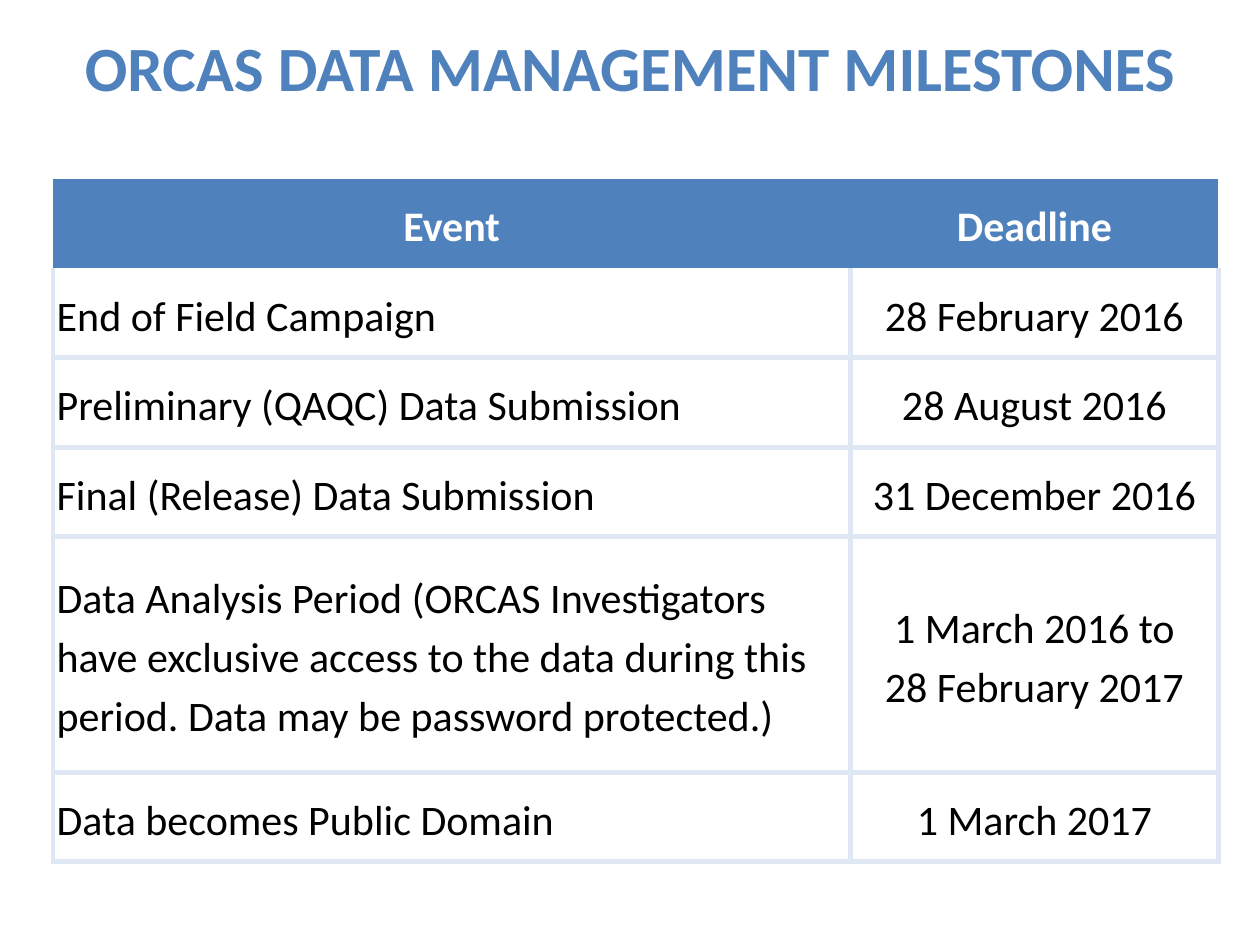
from lxml.etree import SubElement
from pptx import Presentation
from pptx.dml.color import RGBColor
from pptx.enum.text import MSO_ANCHOR, PP_ALIGN
from pptx.oxml.ns import qn
from pptx.util import Inches, Pt

WIDTH, HEIGHT = 10, 7.5
BLUE, PALE, WHITE, BLACK = "4F81BD", "DFE7F4", "FFFFFF", "000000"
COLUMNS = [6.33, 2.92]
ROW, TALL_ROW = 0.71, 1.87
MILESTONES = [
    ("Event", "Deadline"),
    ("End of Field Campaign", "28 February 2016"),
    ("Preliminary (QAQC) Data Submission", "28 August 2016"),
    ("Final (Release) Data Submission", "31 December 2016"),
    ("Data Analysis Period (ORCAS Investigators have exclusive access to the "
     "data during this period. Data may be password protected.)",
     "1 March 2016 to\v28 February 2017"),
    ("Data becomes Public Domain", "1 March 2017"),
]
TALL_INDEX = 4


def color(value):
    """Turn a hex string into a colour."""
    return RGBColor.from_string(value)


def write(tf, text, size, ink, bold, align, spacing=1.0):
    """Write one formatted paragraph into a text frame."""
    p = tf.paragraphs[0]
    p.text = text
    p.alignment, p.line_spacing = align, spacing
    for r in p.runs:
        for name, value in {"name": "Calibri", "size": Pt(size), "bold": bold}.items():
            setattr(r.font, name, value)
        r.font.color.rgb = color(ink)


def set_borders(cell, visible):
    """Draw pale lines on the visible sides and clear the other sides."""
    tc_pr = cell._tc.get_or_add_tcPr()
    for side in "LRTB":
        line = SubElement(tc_pr, qn(f"a:ln{side}"), w=str(Pt(3)))
        if side in visible:
            fill = SubElement(line, qn("a:solidFill"))
            SubElement(fill, qn("a:srgbClr"), val=PALE)
        else:
            SubElement(line, qn("a:noFill"))


def fill_cell(cell, text, row, column):
    """Format one table cell by its row and column."""
    header = row == 0
    for side in ("left", "right", "top", "bottom"):
        setattr(cell, f"margin_{side}", Inches(0.03))
    cell.vertical_anchor = MSO_ANCHOR.MIDDLE
    set_borders(cell, "" if header else "LRB" if row == 1 else "LRTB")
    if header:
        cell.fill.solid()
        cell.fill.fore_color.rgb = color(BLUE)
    else:
        cell.fill.background()
    align = PP_ALIGN.CENTER if header or column else PP_ALIGN.LEFT
    write(cell.text_frame, text, 24, WHITE if header else BLACK, header, align, 1.15)


def add_title(s, text):
    """Add the centred title across the full slide width."""
    sp = s.shapes.add_textbox(0, Inches(0.18), Inches(WIDTH), Inches(0.71))
    sp.text_frame.word_wrap = True
    write(sp.text_frame, text, 36, BLUE, True, PP_ALIGN.CENTER)


def add_milestones(s):
    """Add the table of events and deadlines."""
    heights = [TALL_ROW if i == TALL_INDEX else ROW for i in range(len(MILESTONES))]
    table = s.shapes.add_table(
        len(heights), len(COLUMNS), Inches(0.42), Inches(1.42),
        Inches(sum(COLUMNS)), Inches(sum(heights))).table
    table.first_row = table.horz_banding = False
    for column, width in zip(table.columns, COLUMNS):
        column.width = Inches(width)
    for i, (height, texts) in enumerate(zip(heights, MILESTONES)):
        table.rows[i].height = Inches(height)
        for j, text in enumerate(texts):
            fill_cell(table.cell(i, j), text, i, j)


def main():
    """Build and save the slide."""
    prs = Presentation()
    prs.slide_width, prs.slide_height = Inches(WIDTH), Inches(HEIGHT)
    s = prs.slides.add_slide(prs.slide_layouts[6])
    add_milestones(s)
    add_title(s, "ORCAS DATA MANAGEMENT MILESTONES")
    prs.save("out.pptx")


if __name__ == "__main__":
    main()
